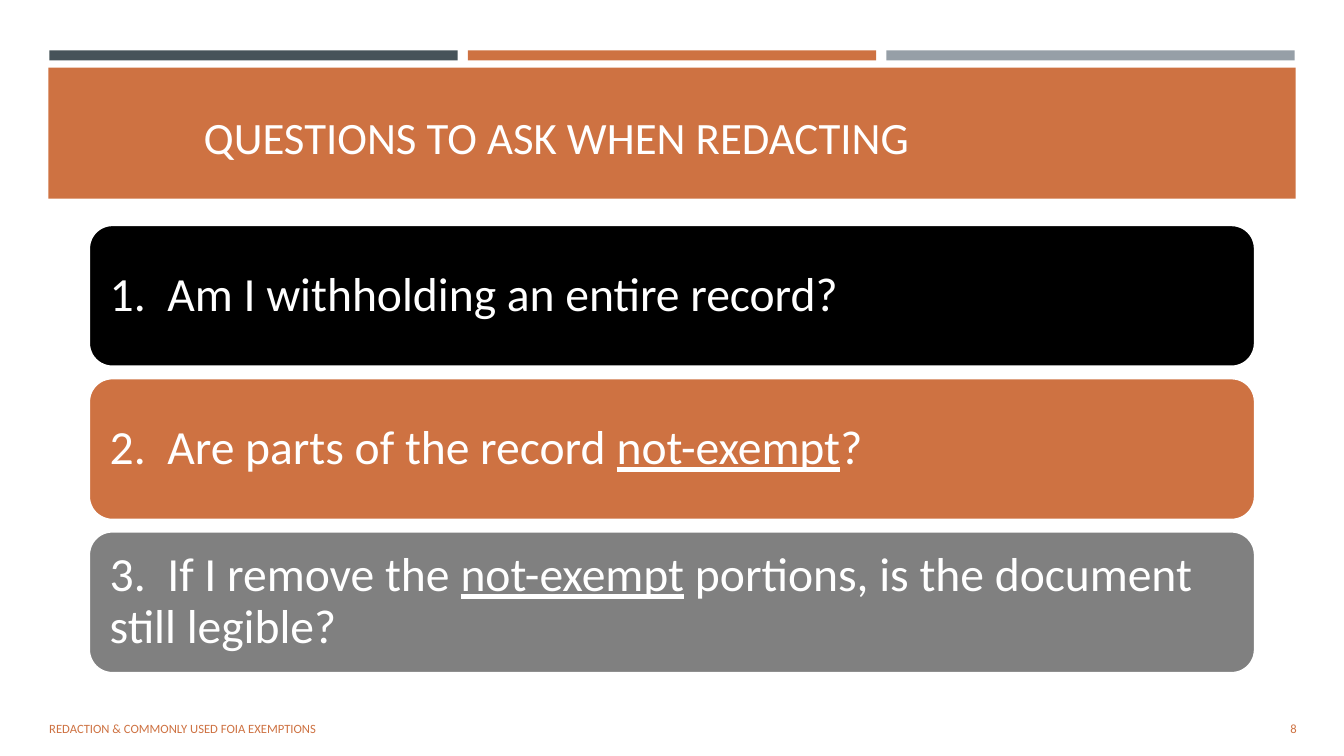
from pptx import Presentation
from pptx.dml.color import RGBColor
from pptx.enum import shapes, text
from pptx.util import Inches, Pt

COLORS = {"slate": "465359", "orange": "CE7242", "silver": "969FA7",
          "black": "000000", "gray": "808080", "white": "FFFFFF"}
FONT = "Calibri"
TITLE = "QUESTIONS TO ASK WHEN REDACTING"
STRIPES = ["slate", "orange", "silver"]
# Each question: card colour, then (wording, underlined) spans
QUESTIONS = [
    ("black", [("1.  Am I withholding an entire record?", False)]),
    ("orange", [("2.  Are parts of the record ", False),
                ("not-exempt", True), ("?", False)]),
    ("gray", [("3.  If I remove the ", False), ("not-exempt", True),
              (" portions, is the document still legible?", False)]),
]
# Footer: wording, left, width, alignment
FOOTER = [
    ("REDACTION & COMMONLY USED FOIA EXEMPTIONS", 0.39, 7.46, text.PP_ALIGN.LEFT),
    ("8", 11.81, 1.15, text.PP_ALIGN.RIGHT),
]


def color(name):
    return RGBColor.from_string(COLORS[name])


def add_block(page, kind, left, top, width, height, fill):
    block = page.shapes.add_shape(
        kind, Inches(left), Inches(top), Inches(width), Inches(height))
    block.shadow.inherit = False
    block.fill.solid()
    block.fill.fore_color.rgb = color(fill)
    block.line.fill.background()
    return block


def style(para, size, font_color, align=text.PP_ALIGN.LEFT):
    para.alignment = align
    para.font.name = FONT
    para.font.size = Pt(size)
    para.font.color.rgb = color(font_color)


deck = Presentation()
deck.slide_width, deck.slide_height = Inches(13.33), Inches(7.5)
page = deck.slides.add_slide(deck.slide_layouts[5])
title = page.shapes.title

# Stripes and title band
RECT = shapes.MSO_SHAPE.RECTANGLE
for index, fill in enumerate(STRIPES):
    add_block(page, RECT, 0.49 + index * 4.15, 0.5, 4.05, 0.1, fill)
band = add_block(page, RECT, 0.48, 0.67, 12.37, 1.3, "orange")

# Title, brought in front of the band
band._element.addnext(title._element)
title.left, title.top = Inches(1.92), Inches(0.87)
title.width, title.height = Inches(9.49), Inches(1.15)
frame = title.text_frame
frame.text = TITLE
frame.auto_size = text.MSO_AUTO_SIZE.NONE
frame.vertical_anchor = text.MSO_ANCHOR.BOTTOM
frame.margin_bottom = Inches(0.4)
style(frame.paragraphs[0], 32, "white")

# Question cards
for index, (fill, spans) in enumerate(QUESTIONS):
    card = add_block(page, shapes.MSO_SHAPE.ROUNDED_RECTANGLE,
                     0.88, 2.23 + index * 1.52, 11.57, 1.41, fill)
    card.line.color.rgb = color("white")
    card.line.width = Pt(2)
    frame = card.text_frame
    frame.word_wrap = True
    frame.vertical_anchor = text.MSO_ANCHOR.MIDDLE
    frame.margin_left = frame.margin_right = Inches(0.14)
    frame.margin_top = frame.margin_bottom = Inches(0.14)
    para = frame.paragraphs[0]
    style(para, 34, "white")
    para.line_spacing = 0.9
    for wording, underlined in spans:
        span = para.add_run()
        span.text = wording
        if underlined:
            span.font.underline = True

# Footer and page number
for wording, left, width, align in FOOTER:
    box = page.shapes.add_textbox(
        Inches(left), Inches(7.03), Inches(width), Inches(0.4))
    frame = box.text_frame
    frame.word_wrap = True
    frame.vertical_anchor = text.MSO_ANCHOR.MIDDLE
    frame.text = wording
    style(frame.paragraphs[0], 9, "orange", align)

deck.save("out.pptx")
